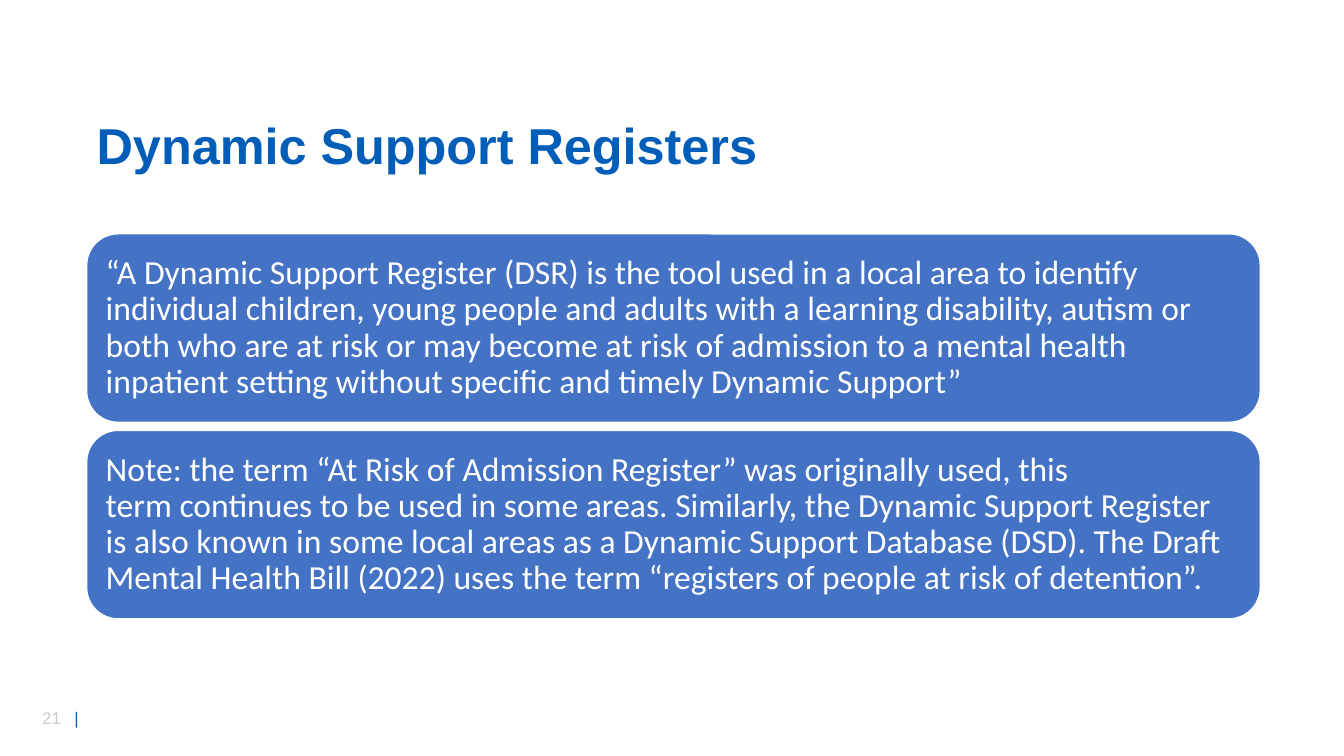
import pptx
import pptx.util
import pptx.dml.color
import pptx.enum.shapes
import pptx.enum.text
import pptx.oxml.ns
import lxml.etree

PX = 9144  # 100 px to the inch
BLUE, PANEL, WHITE, GREY = "005EB8", "4472C4", "FFFFFF", "C9C9C9"
MIDDLE = pptx.enum.text.MSO_ANCHOR.MIDDLE
TOP = pptx.enum.text.MSO_ANCHOR.TOP
HARD_SPACE = chr(160)  # keeps two words on one line

STATEMENTS = [
    "“A Dynamic Support Register (DSR) is the tool used in a local area to identify "
    "individual children, young people and adults with a learning disability, autism or "
    "both who are at risk or may become at risk of admission to a mental health "
    "inpatient setting without specific and timely Dynamic Support”",
    "Note: the term “At Risk of Admission Register” was originally used, this "
    f"term{HARD_SPACE}continues to be used in some areas. Similarly, the Dynamic Support "
    f"Register is{HARD_SPACE}also known in some local areas as a Dynamic Support Database "
    "(DSD). The Draft Mental Health Bill (2022) uses the term “registers of people at "
    "risk of detention”.",
]


def px(*lengths):
    return [pptx.util.Emu(length * PX) for length in lengths]


def colour(value):
    return pptx.dml.color.RGBColor.from_string(value)


def write(shape, spans, size, font, bold=False, spacing=1.0, anchor=MIDDLE,
          margins=(10, 5), tab=None):
    """Fill a shape with one paragraph of (text, colour) spans."""
    frame = shape.text_frame
    frame.word_wrap = True
    frame.vertical_anchor = anchor
    frame.margin_left, frame.margin_top = px(*margins)
    frame.margin_right, frame.margin_bottom = px(*margins)
    para = frame.paragraphs[0]
    para.alignment = pptx.enum.text.PP_ALIGN.LEFT
    para.line_spacing = spacing
    if tab:
        name = pptx.oxml.ns.qn
        stops = lxml.etree.SubElement(para._p.get_or_add_pPr(), name("a:tabLst"))
        lxml.etree.SubElement(stops, name("a:tab"), pos=str(tab * PX), algn="l")
    for text, ink in spans:
        span = para.add_run()
        span.text = text
        span.font.size = pptx.util.Pt(size)
        span.font.name = font
        span.font.bold = bold
        span.font.color.rgb = colour(ink)


def add_title(page, box):
    write(page.shapes.add_textbox(*px(*box)), [("Dynamic Support Registers", BLUE)],
          size=36, font="Arial", bold=True, spacing=0.9)


def add_statements(page, box, gap=8):
    """Stack the statements as equal rounded panels."""
    left, top, width, height = box
    panel_height = (height - gap * (len(STATEMENTS) - 1)) // len(STATEMENTS)
    for index, statement in enumerate(STATEMENTS):
        panel_top = top + index * (panel_height + gap)
        panel = page.shapes.add_shape(
            pptx.enum.shapes.MSO_SHAPE.ROUNDED_RECTANGLE,
            *px(left, panel_top, width, panel_height))
        panel.shadow.inherit = False
        panel.fill.solid()
        panel.fill.fore_color.rgb = colour(PANEL)
        panel.line.color.rgb = colour(WHITE)
        panel.line.width = pptx.util.Pt(1)
        # The rounded corners already inset the text by 9 px.
        write(panel, [(statement, WHITE)], size=24, font="Calibri", spacing=0.9,
              margins=(10, 10))


def add_page_number(page, box):
    write(page.shapes.add_textbox(*px(*box)), [("21\t", GREY), ("|", BLUE)],
          size=12, font="Arial", anchor=TOP, tab=32)


def main():
    deck = pptx.Presentation()
    deck.slide_width, deck.slide_height = px(1333, 750)
    page = deck.slides.add_slide(deck.slide_layouts[6])
    add_page_number(page, (32, 697, 71, 30))
    add_title(page, (86, 114, 1164, 67))
    add_statements(page, (86, 232, 1164, 382))
    deck.save("out.pptx")


if __name__ == "__main__":
    main()
